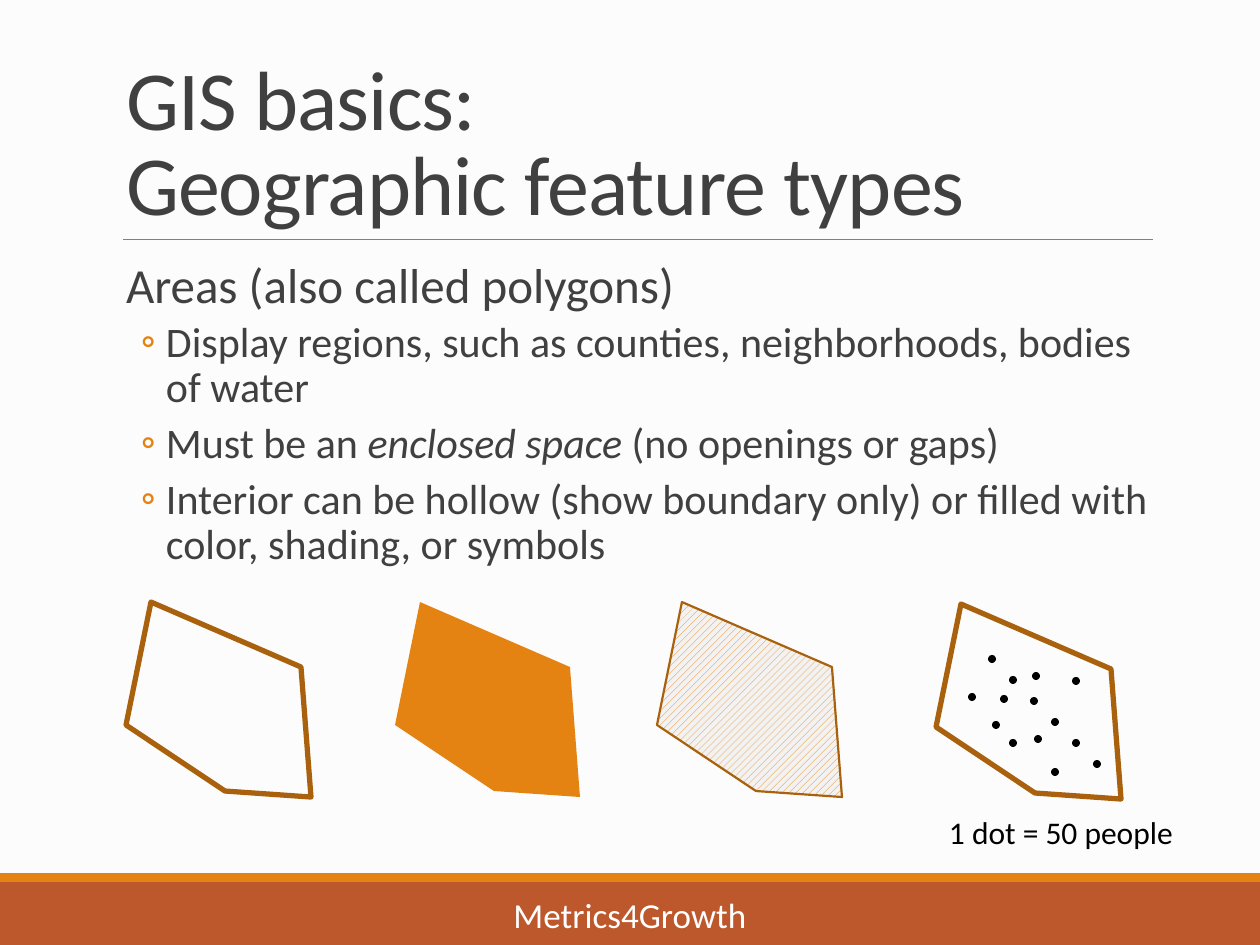
from dataclasses import dataclass
from lxml.etree import SubElement
from pptx import Presentation
from pptx.dml.color import RGBColor
from pptx.enum.dml import MSO_PATTERN
from pptx.enum.shapes import MSO_CONNECTOR, MSO_SHAPE
from pptx.enum.text import MSO_ANCHOR, PP_ALIGN
from pptx.oxml.ns import qn
from pptx.util import Pt

SCALE = 914400 / 126


@dataclass(frozen=True)
class Theme:
    font: str = "Calibri"
    back: str = "FCFCFC"
    ink: str = "404040"
    rule: str = "808080"
    main: str = "E48312"
    edge: str = "A9610D"
    foot: str = "BD582C"
    pale: str = "F2F2F2"
    white: str = "FFFFFF"
    black: str = "000000"
    title: int = 48
    lead: int = 28
    point: int = 24
    brand: int = 20
    note: int = 18


T = Theme()

AREA = [(25, 0), (0, 123), (99, 189), (185, 195), (175, 65)]
DOTS = [(52 + 21 * i, 51 + 21 * i) for i in range(6)] + [
    (73, 135), (64, 91), (136, 73), (96, 68),
    (115, 164), (56, 117), (32, 89), (98, 131)]
POINTS = [
    [("Display regions, such as counties, neighborhoods, bodies of water", False)],
    [("Must be an ", False), ("enclosed space ", True),
     ("(no openings or gaps)", False)],
    [("Interior can be hollow (show boundary only) or filled with color, "
      "shading, or symbols", False)],
]


def px(n):
    return round(n * SCALE)


def rgb(code):
    return RGBColor.from_string(code)


def add_text(slide, box, pad=(13, 6), anchor=MSO_ANCHOR.TOP, wrap=True):
    frame = slide.shapes.add_textbox(*map(px, box)).text_frame
    frame.word_wrap = wrap
    frame.vertical_anchor = anchor
    frame.margin_left = frame.margin_right = px(pad[0])
    frame.margin_top = frame.margin_bottom = px(pad[1])
    return frame


def add_run(para, text, size, color, italic=False):
    run = para.add_run()
    run.text = text
    font = run.font
    font.name, font.size, font.italic = T.font, Pt(size), italic
    font.color.rgb = rgb(color)
    return run


def add_solid(shapes, kind, box, color):
    shape = shapes.add_shape(kind, *map(px, box))
    shape.shadow.inherit = False
    shape.fill.solid()
    shape.fill.fore_color.rgb = rgb(color)
    shape.line.fill.background()


def add_area(shapes, x, y, edge=0):
    """Draw the unfilled area outline; an edge of 0 means no line."""
    pen = shapes.build_freeform(*AREA[0], scale=SCALE)
    pen.add_line_segments(AREA[1:], close=True)
    shape = pen.convert_to_shape(px(x), px(y))
    shape.shadow.inherit = False
    shape.fill.background()
    if edge:
        shape.line.color.rgb = rgb(T.edge)
        shape.line.width = Pt(edge)
    else:
        shape.line.fill.background()
    return shape


def add_head(slide, x, y, w, h):
    # Title lines
    para = add_text(slide, (x, y, w, h), anchor=MSO_ANCHOR.BOTTOM).paragraphs[0]
    para.line_spacing = 0.85
    for i, text in enumerate(["GIS basics:", "Geographic feature types"]):
        if i:
            para.add_line_break()
        run = add_run(para, text, T.title, T.ink)
        run.font._element.set("spc", "-50")
    # Rule under the title
    line = slide.shapes.add_connector(
        MSO_CONNECTOR.STRAIGHT, px(x + 10), px(y + h), px(x + w), px(y + h))
    line.line.color.rgb = rgb(T.rule)
    line.line.width = Pt(0.5)
    SubElement(line._element.spPr, qn("a:effectLst"))


def set_para(para, before, after, left, hang=0, mark=None):
    para.line_spacing = 0.9
    para.space_before, para.space_after = Pt(before), Pt(after)
    props = para._p.get_or_add_pPr()
    props.set("marL", str(px(left)))
    props.set("indent", str(-px(hang)))
    if mark:
        color = SubElement(props, qn("a:buClr"))
        SubElement(color, qn("a:srgbClr")).set("val", T.main)
        SubElement(props, qn("a:buFont")).set("typeface", T.font)
        SubElement(props, qn("a:buChar")).set("char", mark)


def add_body(slide, x, y, w, h):
    frame = add_text(slide, (x, y, w, h), pad=(0, 6))
    lead = frame.paragraphs[0]
    set_para(lead, 12, 2, 13)
    add_run(lead, "Areas (also called polygons)", T.lead, T.ink)
    for runs in POINTS:
        para = frame.add_paragraph()
        set_para(para, 2, 4, 53, 25, "◦")
        for text, italic in runs:
            add_run(para, text, T.point, T.ink, italic)


def add_areas(slide, x, y):
    # Hollow, filled and hatched
    add_area(slide.shapes, x, y, 3)
    fill = add_area(slide.shapes, x + 269, y).fill
    fill.solid()
    fill.fore_color.rgb = rgb(T.main)
    fill = add_area(slide.shapes, x + 531, y, 1.25).fill
    fill.patterned()
    fill.pattern = MSO_PATTERN.WIDE_UPWARD_DIAGONAL
    fill.fore_color.rgb = rgb(T.main)
    fill.back_color.rgb = rgb(T.pale)
    # Dot density, with its key
    left, top = x + 810, y + 2
    group = slide.shapes.add_group_shape().shapes
    add_area(group, left, top, 3)
    for dx, dy in DOTS:
        add_solid(group, MSO_SHAPE.OVAL, (left + dx, top + dy, 8, 8), T.black)
    key = add_text(slide, (left, top + 203, 252, 51), wrap=False)
    add_run(key.paragraphs[0], "1 dot = 50 people", T.note, T.black)


def add_foot(slide, x, y, w, h):
    add_solid(slide.shapes, MSO_SHAPE.RECTANGLE, (x, y + 9, w, h - 9), T.foot)
    add_solid(slide.shapes, MSO_SHAPE.RECTANGLE, (x, y, w, 9), T.main)
    frame = add_text(slide, (x + 380, y + 17, w - 760, 50),
                     anchor=MSO_ANCHOR.MIDDLE)
    para = frame.paragraphs[0]
    para.alignment = PP_ALIGN.CENTER
    add_run(para, "Metrics4Growth", T.brand, T.white)


def main():
    deck = Presentation()
    deck.slide_width, deck.slide_height = px(1260), px(945)
    slide = deck.slides.add_slide(deck.slide_layouts[6])
    slide.background.fill.solid()
    slide.background.fill.fore_color.rgb = rgb(T.back)
    add_foot(slide, 0, 873, 1260, 72)
    add_head(slide, 113, 39, 1040, 200)
    add_body(slide, 113, 255, 1040, 554)
    add_areas(slide, 126, 602)
    deck.save("out.pptx")


if __name__ == "__main__":
    main()
